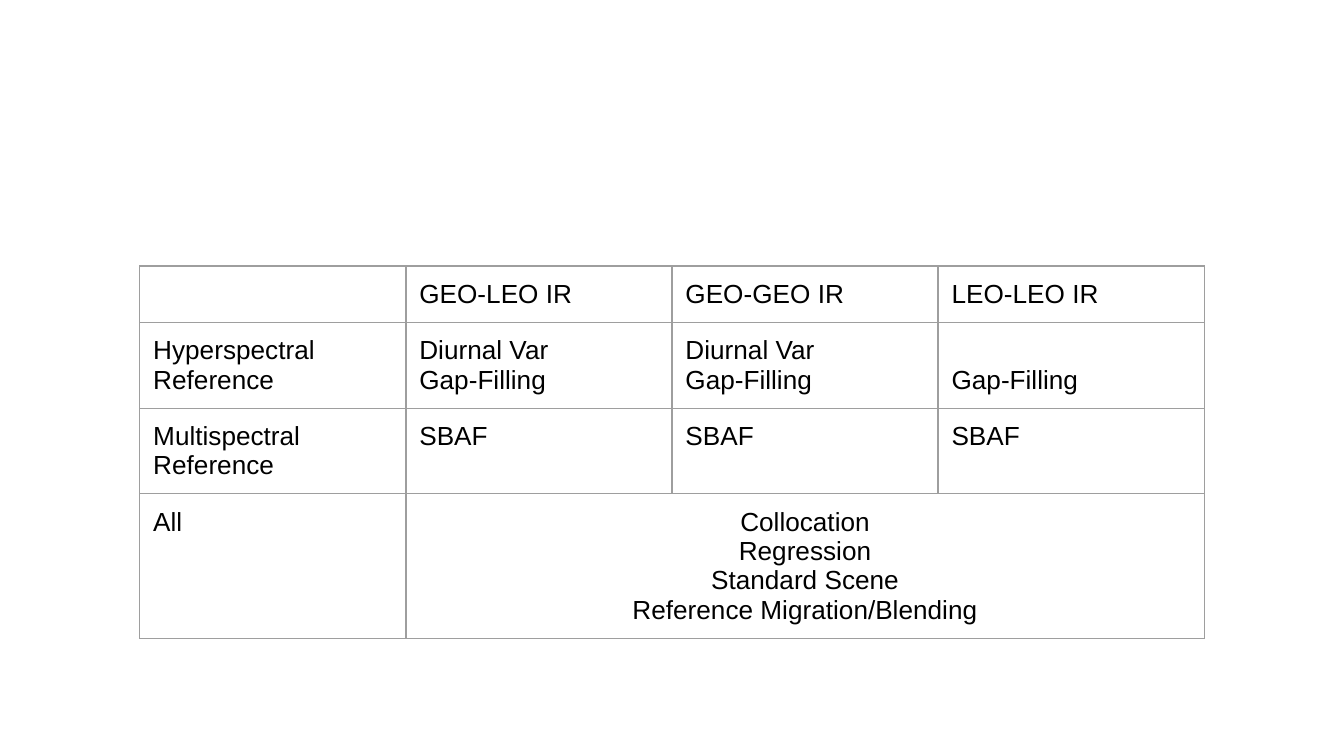
from dataclasses import dataclass

from lxml.etree import SubElement
from pptx import Presentation
from pptx.dml.color import RGBColor
from pptx.enum.text import MSO_ANCHOR, PP_ALIGN
from pptx.oxml.ns import qn
from pptx.table import _Cell as Cell
from pptx.util import Inches, Pt

BLACK = RGBColor(0x00, 0x00, 0x00)
GRAY = RGBColor(0x9E, 0x9E, 0x9E)
FONT, SIZE = "Arial", Pt(14)
PAD = Inches(0.1)
COL, ROW = Inches(1.98), Inches(0.42)


@dataclass
class Entry:
    text: str = ""
    span: int = 1
    align: PP_ALIGN = PP_ALIGN.LEFT
    anchor: MSO_ANCHOR = MSO_ANCHOR.TOP


DRIFT = Entry("Diurnal Var\nGap-Filling")
BAND = Entry("SBAF")
STEPS = "Collocation\nRegression\nStandard Scene\nReference Migration/Blending"

GRID = [
    [Entry(), Entry("GEO-LEO IR"), Entry("GEO-GEO IR"), Entry("LEO-LEO IR")],
    [Entry("Hyperspectral Reference"), DRIFT, DRIFT,
     Entry("Gap-Filling", anchor=MSO_ANCHOR.BOTTOM)],
    [Entry("Multispectral Reference"), BAND, BAND, BAND],
    [Entry("All"), Entry(STEPS, span=3, align=PP_ALIGN.CENTER)],
]


def frame_cell(cell: Cell) -> None:
    """Give a cell gray borders and no fill."""
    props = cell._tc.get_or_add_tcPr()
    for side in ("a:lnL", "a:lnR", "a:lnT", "a:lnB"):
        line = SubElement(props, qn(side), w=str(Pt(0.75)))
        fill = SubElement(line, qn("a:solidFill"))
        SubElement(fill, qn("a:srgbClr"), val=str(GRAY))
    cell.fill.background()


def fill_cell(cell: Cell, entry: Entry) -> None:
    """Write and format the text of a cell."""
    cell.margin_left = cell.margin_right = PAD
    cell.margin_top = cell.margin_bottom = PAD
    cell.vertical_anchor = entry.anchor
    cell.text_frame.text = entry.text
    for para in cell.text_frame.paragraphs:
        para.alignment = entry.align
        for run in para.runs:
            run.font.name, run.font.size = FONT, SIZE
            run.font.color.rgb = BLACK
        # The end mark keeps an empty cell as low as its neighbours
        end = SubElement(para._p, qn("a:endParaRPr"), sz=str(int(SIZE.pt * 100)))
        SubElement(end, qn("a:latin"), typeface=FONT)


def main() -> None:
    deck = Presentation()
    deck.slide_width = Inches(10)
    deck.slide_height = deck.slide_width * 9 // 16
    slide = deck.slides.add_slide(deck.slide_layouts[6])

    # Table, centred across the slide
    rows, cols = len(GRID), len(GRID[0])
    left = (deck.slide_width - cols * COL) // 2
    frame = slide.shapes.add_table(
        rows, cols, left, Inches(1.98), cols * COL, rows * ROW)
    table = frame.table
    table.first_row = table.horz_banding = False

    # Borders, then text
    for cell in table.iter_cells():
        frame_cell(cell)
    for r, line in enumerate(GRID):
        for c, entry in enumerate(line):
            cell = table.cell(r, c)
            if entry.span > 1:
                cell.merge(table.cell(r, c + entry.span - 1))
            fill_cell(cell, entry)
    frame.height = Inches(2.9)

    deck.save("out.pptx")


if __name__ == "__main__":
    main()
